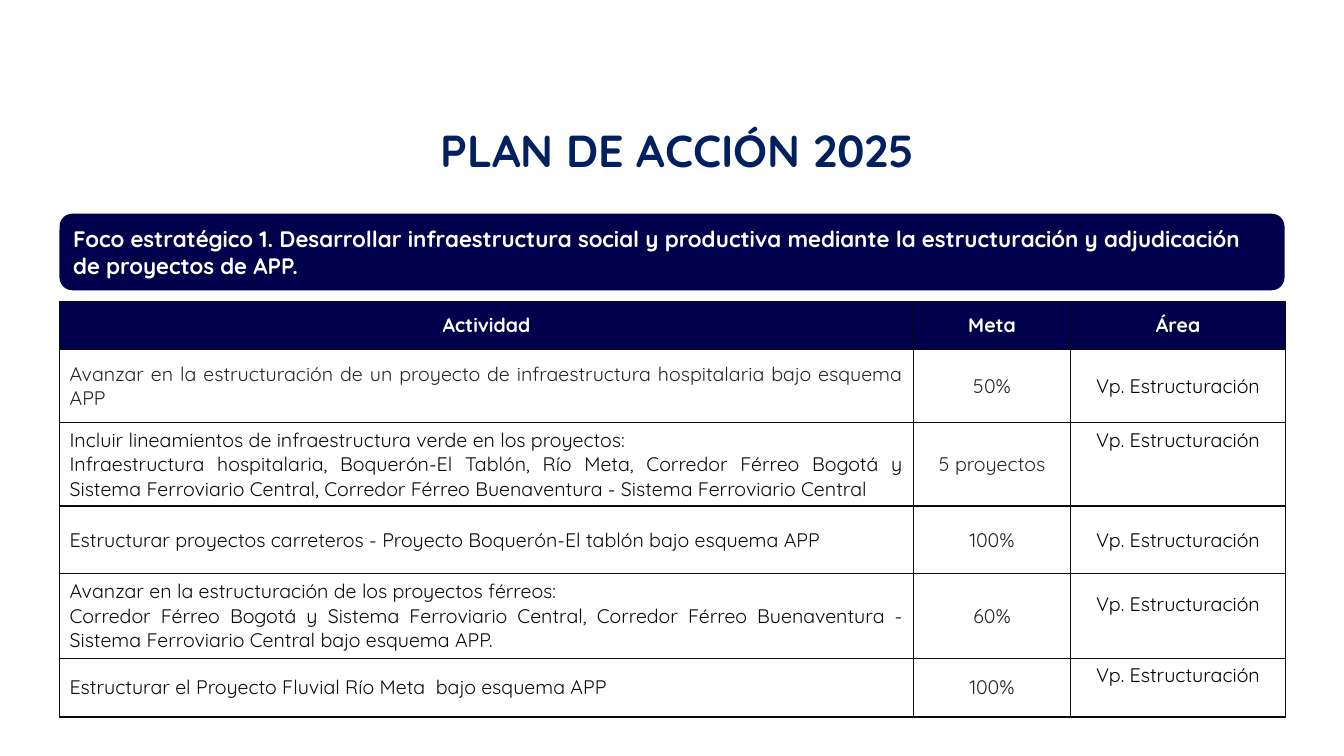
"""Build the 2025 action plan slide with its strategic focus banner and activity table."""
from dataclasses import dataclass

from lxml import etree
from pptx import Presentation
from pptx.dml.color import RGBColor
from pptx.enum.shapes import MSO_SHAPE
from pptx.enum.text import MSO_ANCHOR, MSO_AUTO_SIZE, PP_ALIGN
from pptx.oxml.ns import qn
from pptx.slide import Slide
from pptx.table import _Cell
from pptx.text.text import TextFrame
from pptx.util import Inches, Pt

CENTER, JUSTIFY, LEFT = PP_ALIGN.CENTER, PP_ALIGN.JUSTIFY, PP_ALIGN.LEFT
MIDDLE = MSO_ANCHOR.MIDDLE
NO_AUTO_SIZE = MSO_AUTO_SIZE.NONE
ROUNDED_RECTANGLE = MSO_SHAPE.ROUNDED_RECTANGLE
TITLE_ONLY_LAYOUT = 5

FONT = "Quicksand"
COLORS = {
    "navy": "00004C",
    "title": "002060",
    "white": "FFFFFF",
    "black": "000000",
    "ink": "0C0C0C",
    "gray": "262626",
}
COLUMN_WIDTHS = (8.47, 1.56, 2.13)
HEADERS = ("Actividad", "Meta", "Área")
HEADER_HEIGHT = 0.48
AREA = "Vp. Estructuración"
CELL_MARGIN = 0.05


@dataclass(frozen=True)
class TextStyle:
    """Look of the text in one box or cell."""

    size: int
    color: str
    bold: bool = False
    alignment: PP_ALIGN = CENTER


@dataclass(frozen=True)
class Activity:
    """One table row; area_lift raises the area text above the middle."""

    paragraphs: tuple[str, ...]
    goal: str
    height: float
    color: str = "ink"
    area_lift: float = 0


ACTIVITIES = (
    Activity(
        ("Avanzar en la estructuración de un proyecto de infraestructura "
         "hospitalaria bajo esquema APP",),
        "50%", 0.72, color="gray",
    ),
    Activity(
        ("Incluir lineamientos de infraestructura verde en los proyectos:",
         "Infraestructura hospitalaria, Boquerón-El Tablón, Río Meta, Corredor "
         "Férreo Bogotá y Sistema Ferroviario Central, Corredor Férreo "
         "Buenaventura - Sistema Ferroviario Central"),
        "5 proyectos", 0.78, area_lift=0.24,
    ),
    Activity(
        ("Estructurar proyectos carreteros - Proyecto Boquerón-El tablón bajo "
         "esquema APP",),
        "100%", 0.67,
    ),
    Activity(
        ("Avanzar en la estructuración de los proyectos férreos:",
         "Corredor Férreo Bogotá y Sistema Ferroviario Central, Corredor Férreo "
         "Buenaventura - Sistema Ferroviario Central bajo esquema APP."),
        "60%", 0.84, area_lift=0.12,
    ),
    Activity(
        ("Estructurar el Proyecto Fluvial Río Meta  bajo esquema APP",),
        "100%", 0.58, area_lift=0.12,
    ),
)


def color(name: str) -> RGBColor:
    """Return the named colour."""
    return RGBColor.from_string(COLORS[name])


def write_text(frame: TextFrame, texts: tuple[str, ...], style: TextStyle) -> None:
    """Write one formatted paragraph for each text."""
    for index, text in enumerate(texts):
        paragraph = frame.add_paragraph() if index else frame.paragraphs[0]
        paragraph.alignment = style.alignment
        run = paragraph.add_run()
        run.text = text
        run.font.name = FONT
        run.font.size = Pt(style.size)
        run.font.bold = style.bold
        run.font.color.rgb = color(style.color)


def add_borders(cell: _Cell) -> None:
    """Draw a thin line on all four sides of a cell."""
    properties = cell._tc.get_or_add_tcPr()
    for index, side in enumerate(("lnL", "lnR", "lnT", "lnB")):
        line = etree.Element(qn(f"a:{side}"), w=str(Pt(1)))
        fill = etree.SubElement(line, qn("a:solidFill"))
        etree.SubElement(fill, qn("a:srgbClr"), val=COLORS["ink"])
        properties.insert(index, line)


def fill_cell(cell: _Cell, texts: tuple[str, ...], style: TextStyle,
              fill: str | None = None, lift: float = 0) -> None:
    """Format one table cell and write its text."""
    if fill:
        cell.fill.solid()
        cell.fill.fore_color.rgb = color(fill)
    else:
        cell.fill.background()
    add_borders(cell)
    cell.vertical_anchor = MIDDLE
    cell.margin_bottom = Inches(CELL_MARGIN + 2 * lift)
    write_text(cell.text_frame, texts, style)


def add_title(slide: Slide) -> None:
    """Place the slide title."""
    title = slide.shapes.title
    title.left, title.top = Inches(3.52), Inches(1.24)
    title.width, title.height = Inches(6.4), Inches(0.56)
    frame = title.text_frame
    frame.auto_size = NO_AUTO_SIZE
    frame.word_wrap = True
    frame.vertical_anchor = MIDDLE
    write_text(frame, ("PLAN DE ACCIÓN 2025",), TextStyle(32, "title", True))
    frame.paragraphs[0].line_spacing = 0.9


def add_focus_banner(slide: Slide) -> None:
    """Draw the strategic focus banner."""
    banner = slide.shapes.add_shape(
        ROUNDED_RECTANGLE, Inches(0.59), Inches(2.12), Inches(12.15), Inches(0.76))
    banner.shadow.inherit = False
    banner.fill.solid()
    banner.fill.fore_color.rgb = color("navy")
    banner.line.fill.background()
    frame = banner.text_frame
    frame.word_wrap = True
    frame.vertical_anchor = MIDDLE
    write_text(
        frame,
        ("Foco estratégico 1. Desarrollar infraestructura social y productiva "
         "mediante la estructuración y adjudicación de proyectos de APP.",),
        TextStyle(16, "white", True, LEFT))


def add_activity_table(slide: Slide) -> None:
    """Build the table of activities, goals and areas."""
    heights = (HEADER_HEIGHT, *(activity.height for activity in ACTIVITIES))
    table = slide.shapes.add_table(
        len(heights), len(COLUMN_WIDTHS), Inches(0.59), Inches(2.99),
        Inches(sum(COLUMN_WIDTHS)), Inches(sum(heights))).table
    table.first_row = table.horz_banding = False
    for column, width in zip(table.columns, COLUMN_WIDTHS):
        column.width = Inches(width)
    for row, height in zip(table.rows, heights):
        row.height = Inches(height)
    for index, header in enumerate(HEADERS):
        fill_cell(table.cell(0, index), (header,), TextStyle(14, "white", True), "navy")
    for index, activity in enumerate(ACTIVITIES, start=1):
        fill_cell(table.cell(index, 0), activity.paragraphs,
                  TextStyle(14, activity.color, alignment=JUSTIFY))
        fill_cell(table.cell(index, 1), (activity.goal,), TextStyle(14, "gray"))
        fill_cell(table.cell(index, 2), (AREA,), TextStyle(14, "black"),
                  lift=activity.area_lift)


def main() -> None:
    """Create and save the presentation."""
    presentation = Presentation()
    presentation.slide_width, presentation.slide_height = Inches(13.33), Inches(7.5)
    slide = presentation.slides.add_slide(presentation.slide_layouts[TITLE_ONLY_LAYOUT])
    add_title(slide)
    add_focus_banner(slide)
    add_activity_table(slide)
    presentation.save("out.pptx")


if __name__ == "__main__":
    main()
